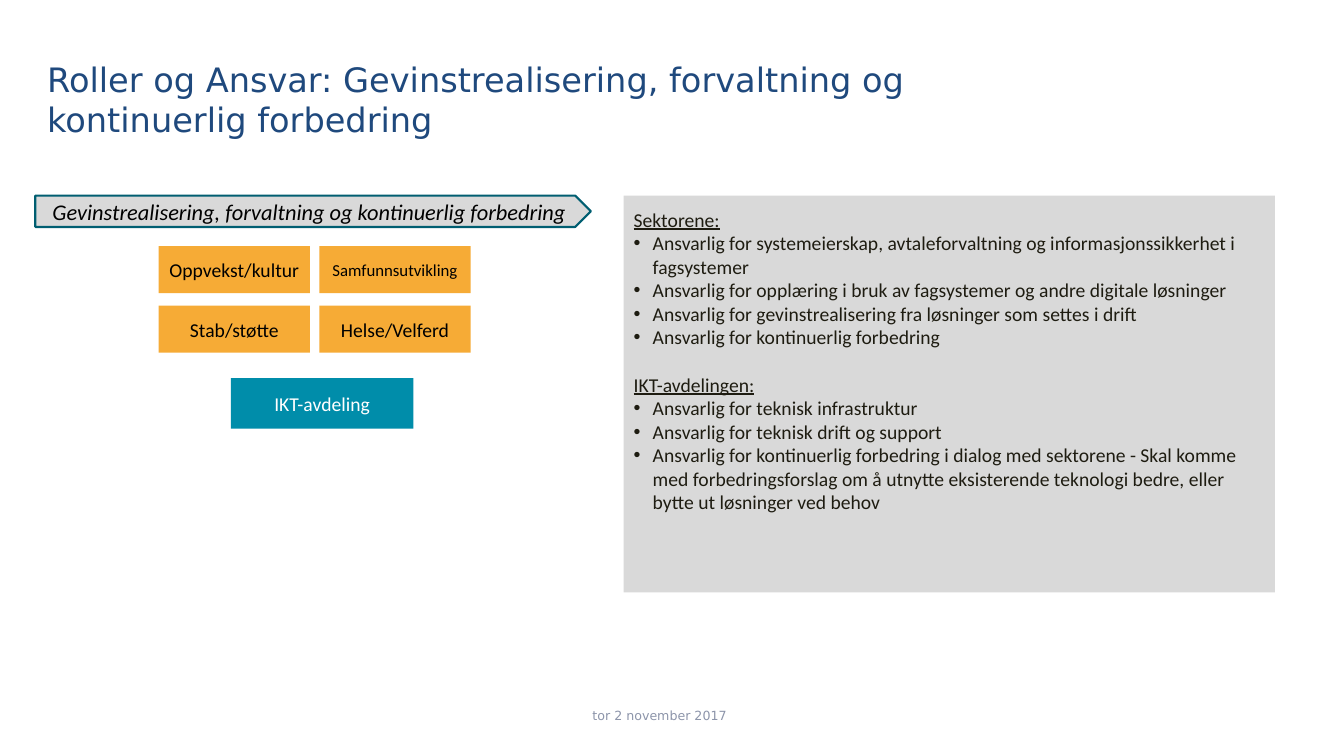
from lxml.etree import SubElement
from pptx import Presentation
from pptx.dml.color import RGBColor
from pptx.enum.shapes import MSO_SHAPE as Preset
from pptx.enum.text import MSO_ANCHOR as Anchor, PP_ALIGN as Align
from pptx.oxml.ns import qn
from pptx.util import Cm, Pt

NAVY = RGBColor(0x1F, 0x49, 0x7D)
SLATE = RGBColor(0x8D, 0x95, 0xAA)
TEAL = RGBColor(0x00, 0x8D, 0xAA)
DARK_TEAL = RGBColor(0x00, 0x5E, 0x71)
GREY = RGBColor(0xD9, 0xD9, 0xD9)
ORANGE = RGBColor(0xF6, 0xAB, 0x36)
INK = RGBColor(0x1E, 0x1C, 0x11)
BLACK = RGBColor(0, 0, 0)
WHITE = RGBColor(0xFF, 0xFF, 0xFF)

SECTORS = [
    [("Oppvekst/kultur", 14), ("Samfunnsutvikling", 12)],
    [("Stab/støtte", 14), ("Helse/Velferd", 14)],
]
RESPONSIBILITIES = {
    "Sektorene:": [
        "Ansvarlig for systemeierskap, avtaleforvaltning og informasjonssikkerhet i fagsystemer",
        "Ansvarlig for opplæring i bruk av fagsystemer og andre digitale løsninger",
        "Ansvarlig for gevinstrealisering fra løsninger som settes i drift",
        "Ansvarlig for kontinuerlig forbedring",
    ],
    "IKT-avdelingen:": [
        "Ansvarlig for teknisk infrastruktur",
        "Ansvarlig for teknisk drift og support",
        "Ansvarlig for kontinuerlig forbedring i dialog med sektorene - Skal komme med "
        "forbedringsforslag om å utnytte eksisterende teknologi bedre, eller bytte ut "
        "løsninger ved behov",
    ],
}


def format_runs(paragraph, size, color, font="Calibri", italic=False, underline=False):
    for run in paragraph.runs:
        run.font.name = font
        run.font.size = Pt(size)
        run.font.color.rgb = color
        run.font.italic = italic
        run.font.underline = underline


def add_heading(slide, box, text, size, color, align):
    frame = slide.shapes.add_textbox(*map(Cm, box)).text_frame
    frame.word_wrap = True
    frame.vertical_anchor = Anchor.MIDDLE
    frame.text = text
    frame.paragraphs[0].alignment = align
    format_runs(frame.paragraphs[0], size, color, "DejaVu Sans")


def add_block(slide, box, fill, preset=Preset.RECTANGLE):
    shape = slide.shapes.add_shape(preset, *map(Cm, box))
    shape.shadow.inherit = False
    shape.fill.solid()
    shape.fill.fore_color.rgb = fill
    shape.line.fill.background()
    return shape


def add_label(shape, text, size, color, italic=False):
    frame = shape.text_frame
    frame.word_wrap = True
    frame.vertical_anchor = Anchor.MIDDLE
    frame.text = text
    frame.paragraphs[0].alignment = Align.CENTER
    format_runs(frame.paragraphs[0], size, color, italic=italic)


def add_organisation(slide, left, top):
    banner = add_block(slide, (left, top, 14, 0.79), GREY, Preset.PENTAGON)
    banner.line.color.rgb = DARK_TEAL
    banner.line.width = Pt(1.5)
    add_label(banner, "Gevinstrealisering, forvaltning og kontinuerlig forbedring", 16, BLACK, True)

    for row, sectors in enumerate(SECTORS):
        for column, (name, size) in enumerate(sectors):
            box = (left + 3.11 + 4.05 * column, top + 1.27 + 1.5 * row, 3.81, 1.19)
            add_label(add_block(slide, box, ORANGE), name, size, BLACK)

    department = add_block(slide, (left + 4.93, top + 4.6, 4.6, 1.27), TEAL)
    add_label(department, "IKT-avdeling", 14, WHITE)


def add_bullet(paragraph):
    properties = paragraph._p.get_or_add_pPr()
    properties.set("marL", str(Cm(0.48)))
    properties.set("indent", str(-Cm(0.48)))
    SubElement(properties, qn("a:buFont"), typeface="Arial")
    SubElement(properties, qn("a:buChar"), char="•")


def add_responsibilities(slide, box):
    frame = add_block(slide, box, GREY).text_frame
    frame.word_wrap = True
    frame.vertical_anchor = Anchor.TOP
    frame.margin_top = Cm(0.3)
    lines = [
        (text, is_heading)
        for heading, duties in RESPONSIBILITIES.items()
        for text, is_heading in [(heading, True)] + [(duty, False) for duty in duties]
    ]
    for index, (text, is_heading) in enumerate(lines):
        paragraph = frame.add_paragraph() if index else frame.paragraphs[0]
        paragraph.text = text
        paragraph.alignment = Align.LEFT
        if not is_heading:
            add_bullet(paragraph)
        elif index:
            paragraph.space_before = Pt(17)
        format_runs(paragraph, 14, INK, underline=is_heading)


def main():
    presentation = Presentation()
    presentation.slide_width = Cm(33.87)
    presentation.slide_height = Cm(19.05)
    slide = presentation.slides.add_slide(presentation.slide_layouts[6])
    add_heading(
        slide, (0.94, 0.91, 25.63, 3.18),
        "Roller og Ansvar: Gevinstrealisering, forvaltning og kontinuerlig forbedring",
        24, NAVY, Align.LEFT,
    )
    add_organisation(slide, 0.89, 4.93)
    add_responsibilities(slide, (15.72, 4.93, 16.41, 10))
    add_heading(slide, (12.67, 17.53, 7.9, 1.02), "tor 2 november 2017", 9, SLATE, Align.CENTER)
    presentation.save("out.pptx")


if __name__ == "__main__":
    main()
